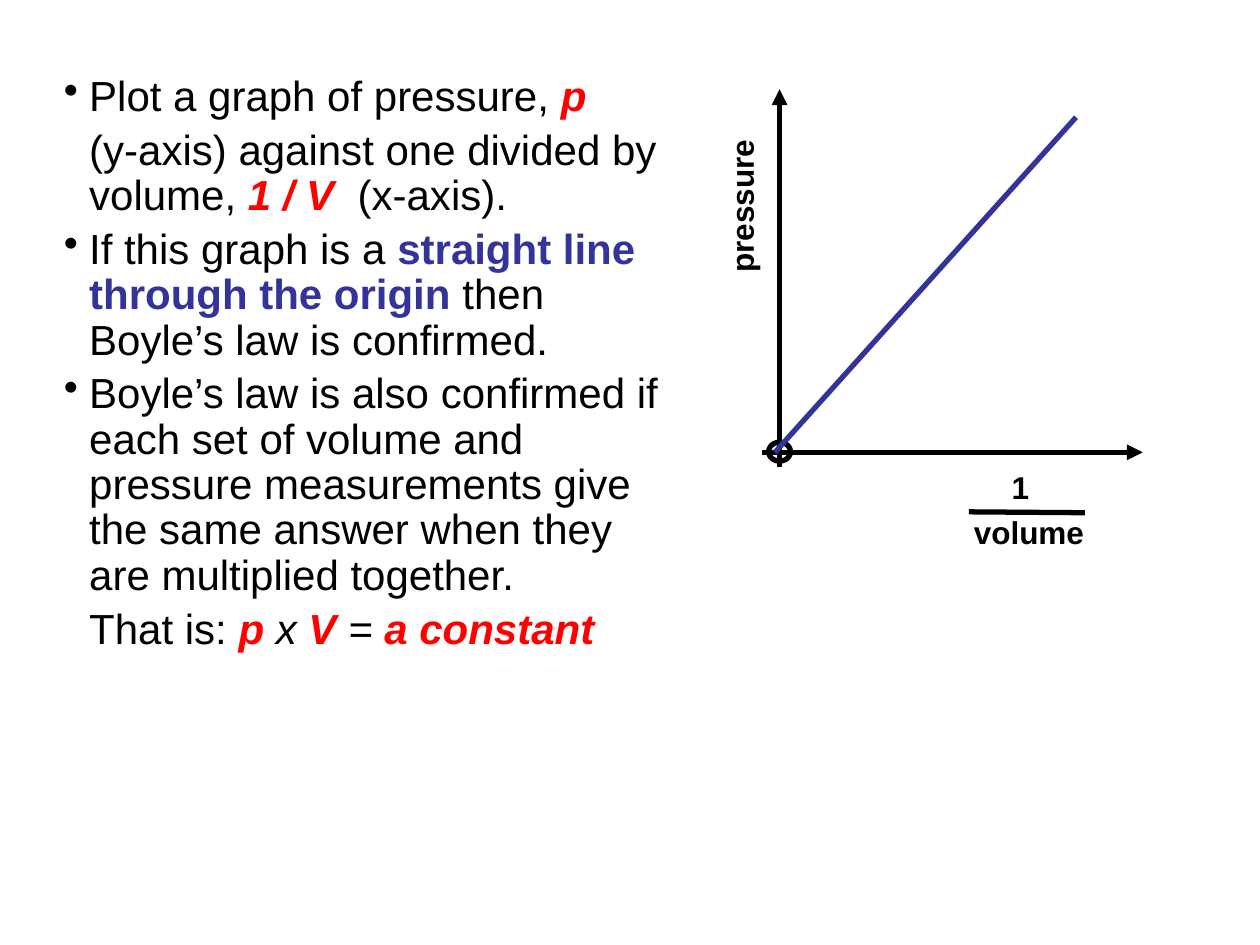
from lxml import etree
from pptx import Presentation
from pptx.dml.color import RGBColor
from pptx.enum.shapes import MSO_CONNECTOR, MSO_SHAPE
from pptx.enum.text import MSO_AUTO_SIZE
from pptx.oxml.ns import qn
from pptx.util import Pt

STRAIGHT = MSO_CONNECTOR.STRAIGHT
OVAL = MSO_SHAPE.OVAL
FIT_SHAPE = MSO_AUTO_SIZE.SHAPE_TO_FIT_TEXT

COLORS = {"black": "000000", "red": "FF0000", "blue": "333399"}
PLAIN = {}
SYMBOL = {"color": "red", "bold": True, "italic": True}
KEY = {"color": "blue", "bold": True}
ITALIC = {"italic": True}

# Each paragraph: whether it has a bullet, then its runs
BODY = [
    (True, [("Plot a graph of pressure, ", PLAIN), ("p", SYMBOL)]),
    (False, [("(y-axis) against one divided by volume, ", PLAIN),
             ("1 / V ", SYMBOL), (" (x-axis).", PLAIN)]),
    (True, [("If this graph is a ", PLAIN),
            ("straight line through the origin", KEY),
            (" then Boyle’s law is confirmed.", PLAIN)]),
    (True, [("Boyle’s law is also confirmed if each set of volume and pressure "
             "measurements give the same answer when they are multiplied "
             "together.", PLAIN)]),
    (False, [("That is: ", PLAIN), ("p ", SYMBOL), ("x", ITALIC),
             (" V ", SYMBOL), ("=", ITALIC), (" a constant", SYMBOL)]),
]


def rgb(name):
    return RGBColor.from_string(COLORS[name])


class SlideBuilder:
    font = "Arial"
    body_size = 24
    label_size = 18
    line_width = 3
    indent = 14.4

    def __init__(self, slide):
        self.s = slide

    def textbox(self, left, top, width, height):
        sp = self.s.shapes.add_textbox(Pt(left), Pt(top), Pt(width), Pt(height))
        sp.text_frame.word_wrap = True
        return sp

    def run(self, p, text, size, color="black", **formats):
        r = p.add_run()
        r.text = text
        formats = {"name": self.font, "size": Pt(size), **formats}
        for name, value in formats.items():
            setattr(r.font, name, value)
        r.font.color.rgb = rgb(color)

    def body(self, left, top, width, height, paragraphs):
        tf = self.textbox(left, top, width, height).text_frame
        for i, (bullet, runs) in enumerate(paragraphs):
            p = tf.add_paragraph() if i else tf.paragraphs[0]
            pPr = p._p.get_or_add_pPr()
            pPr.set("marL", str(Pt(self.indent)))
            pPr.set("indent", str(-Pt(self.indent) if bullet else 0))
            if bullet:
                etree.SubElement(pPr, qn("a:buChar"), char="•")
            else:
                etree.SubElement(pPr, qn("a:buNone"))
            p.line_spacing = 0.9
            p.space_before = Pt(0.2 * self.body_size if i else 0)
            for text, formats in runs:
                self.run(p, text, self.body_size, **formats)

    def label(self, left, top, width, height, text, rotation=0):
        sp = self.textbox(left, top, width, height)
        sp.rotation = rotation
        sp.text_frame.auto_size = FIT_SHAPE
        self.run(sp.text_frame.paragraphs[0], text, self.label_size, bold=True)

    def line(self, x1, y1, x2, y2, color="black", arrow=False):
        sp = self.s.shapes.add_connector(STRAIGHT, Pt(x1), Pt(y1), Pt(x2), Pt(y2))
        sp.line.width = Pt(self.line_width)
        sp.line.color.rgb = rgb(color)
        if arrow:
            etree.SubElement(sp.line._get_or_add_ln(), qn("a:tailEnd"),
                             type="triangle")
        etree.SubElement(sp._element.spPr, qn("a:effectLst"))

    def ring(self, left, top, width, height):
        sp = self.s.shapes.add_shape(OVAL, Pt(left), Pt(top), Pt(width), Pt(height))
        sp.shadow.inherit = False
        sp.fill.background()
        sp.line.width = Pt(self.line_width)
        sp.line.color.rgb = rgb("black")


def main():
    prs = Presentation()
    prs.slide_width, prs.slide_height = Pt(720), Pt(540)
    b = SlideBuilder(prs.slides.add_slide(prs.slide_layouts[6]))

    b.body(29.5, 39.6, 357, 376.6, BODY)

    b.line(445.5, 267, 445.5, 51, arrow=True)
    b.line(435.5, 258.5, 653, 258.5, arrow=True)
    b.ring(439.2, 252.7, 12.5, 10.8)
    b.label(373.7, 98.6, 100, 28.8, "pressure", rotation=270)
    b.label(549.4, 289.4, 100, 28.8, "volume")
    b.label(571, 264.2, 33.8, 28.8, "1")
    b.line(553.7, 292.5, 619.9, 293)
    b.line(442.8, 258.5, 614.9, 67, color="blue")

    prs.save("out.pptx")


if __name__ == "__main__":
    main()
